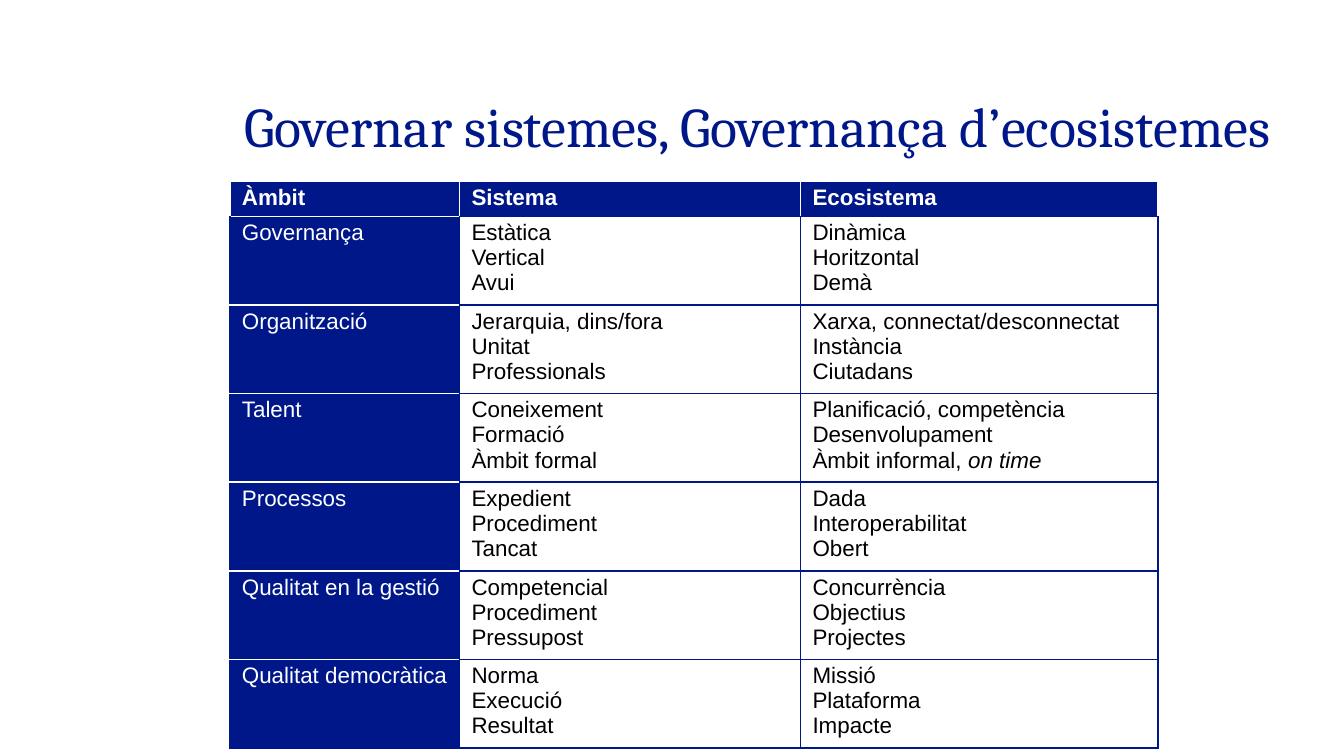
from lxml import etree
from pptx import Presentation
from pptx import util as u
from pptx.dml.color import RGBColor
from pptx.enum import text
from pptx.oxml import ns

BLUE = RGBColor(0x00, 0x17, 0x89)
WHITE = RGBColor(0xFF, 0xFF, 0xFF)
BLACK = RGBColor(0x00, 0x00, 0x00)

HEAD = ["Àmbit", "Sistema", "Ecosistema"]
ROWS = [
    ["Governança", "Estàtica\nVertical\nAvui", "Dinàmica\nHoritzontal\nDemà"],
    ["Organització", "Jerarquia, dins/fora\nUnitat\nProfessionals",
     "Xarxa, connectat/desconnectat\nInstància\nCiutadans"],
    ["Talent", "Coneixement\nFormació\nÀmbit formal",
     "Planificació, competència\nDesenvolupament\nÀmbit informal, "],
    ["Processos", "Expedient\nProcediment\nTancat",
     "Dada\nInteroperabilitat\nObert"],
    ["Qualitat en la gestió", "Competencial\nProcediment\nPressupost",
     "Concurrència\nObjectius\nProjectes"],
    ["Qualitat democràtica", "Norma\nExecució\nResultat",
     "Missió\nPlataforma\nImpacte"],
]


class Deck:
    def __init__(self, wide, high):
        self.prs = Presentation()
        self.prs.slide_width, self.prs.slide_height = u.Pt(wide), u.Pt(high)
        self.slide = self.prs.slides.add_slide(self.prs.slide_layouts[6])

    def style(self, run, face, size, color, bold=False, slant=False):
        font = run.font
        font.name, font.size = face, u.Pt(size)
        font.bold, font.italic = bold, slant
        font.color.rgb = color

    def title(self, words, x, y, w, h):
        box = self.slide.shapes.add_textbox(u.Pt(x), u.Pt(y), u.Pt(w), u.Pt(h))
        frame = box.text_frame
        frame.word_wrap = True
        frame.vertical_anchor = text.MSO_ANCHOR.BOTTOM
        frame.text = words
        para = frame.paragraphs[0]
        para.line_spacing = 0.9
        self.style(para.runs[0], "Cambria", 30, BLUE)

    def edge(self, cell, sides):
        props = cell._tc.get_or_add_tcPr()
        for spot, (side, color) in enumerate(sides.items()):
            line = etree.Element(ns.qn(f"a:ln{side}"), w=str(u.Pt(1)))
            fill = etree.SubElement(line, ns.qn("a:solidFill"))
            etree.SubElement(fill, ns.qn("a:srgbClr"), val=str(color))
            props.insert(spot, line)

    def cell(self, cell, words, ink, back, sides, bold=False):
        cell.margin_left, cell.margin_right = u.Pt(6.5), u.Pt(4.3)
        cell.margin_top = cell.margin_bottom = u.Pt(2.15)
        cell.fill.solid()
        cell.fill.fore_color.rgb = back
        cell.text_frame.text = words
        for para in cell.text_frame.paragraphs:
            for run in para.runs:
                self.style(run, "Arial", 12, ink, bold)
        self.edge(cell, sides)

    def table(self, head, rows, x, y, widths, top, high):
        count = len(rows)
        grid = self.slide.shapes.add_table(
            count + 1, len(head), u.Pt(x), u.Pt(y),
            u.Pt(sum(widths)), u.Pt(top + high * count)).table
        for col, width in zip(grid.columns, widths):
            col.width = u.Pt(width)
        for r, line in enumerate([head] + rows):
            grid.rows[r].height = u.Pt(high if r else top)
            for c, words in enumerate(line):
                dark = r == 0 or c == 0
                rim = WHITE if dark else BLUE
                sides = dict.fromkeys("LRTB", rim)
                if r == 0 and c or r == count:
                    sides["B"] = BLUE
                if r and c == 0:
                    sides["L"] = sides["R"] = BLUE
                self.cell(grid.cell(r, c), words, WHITE if dark else BLACK,
                          BLUE if dark else WHITE, sides, r == 0)
        return grid

    def slant(self, cell, words):
        run = cell.text_frame.paragraphs[-1].add_run()
        run.text = words
        self.style(run, "Arial", 12, BLACK, slant=True)


def main():
    deck = Deck(720, 405)
    deck.title("Governar sistemes, Governança d’ecosistemes",
               123.8, 20.2, 574.6, 69.1)
    grid = deck.table(HEAD, ROWS, 123.1, 97.2, [123, 182.7, 191.5], 18.7, 47.5)
    deck.slant(grid.cell(3, 2), "on time")
    deck.prs.save("out.pptx")


if __name__ == "__main__":
    main()
